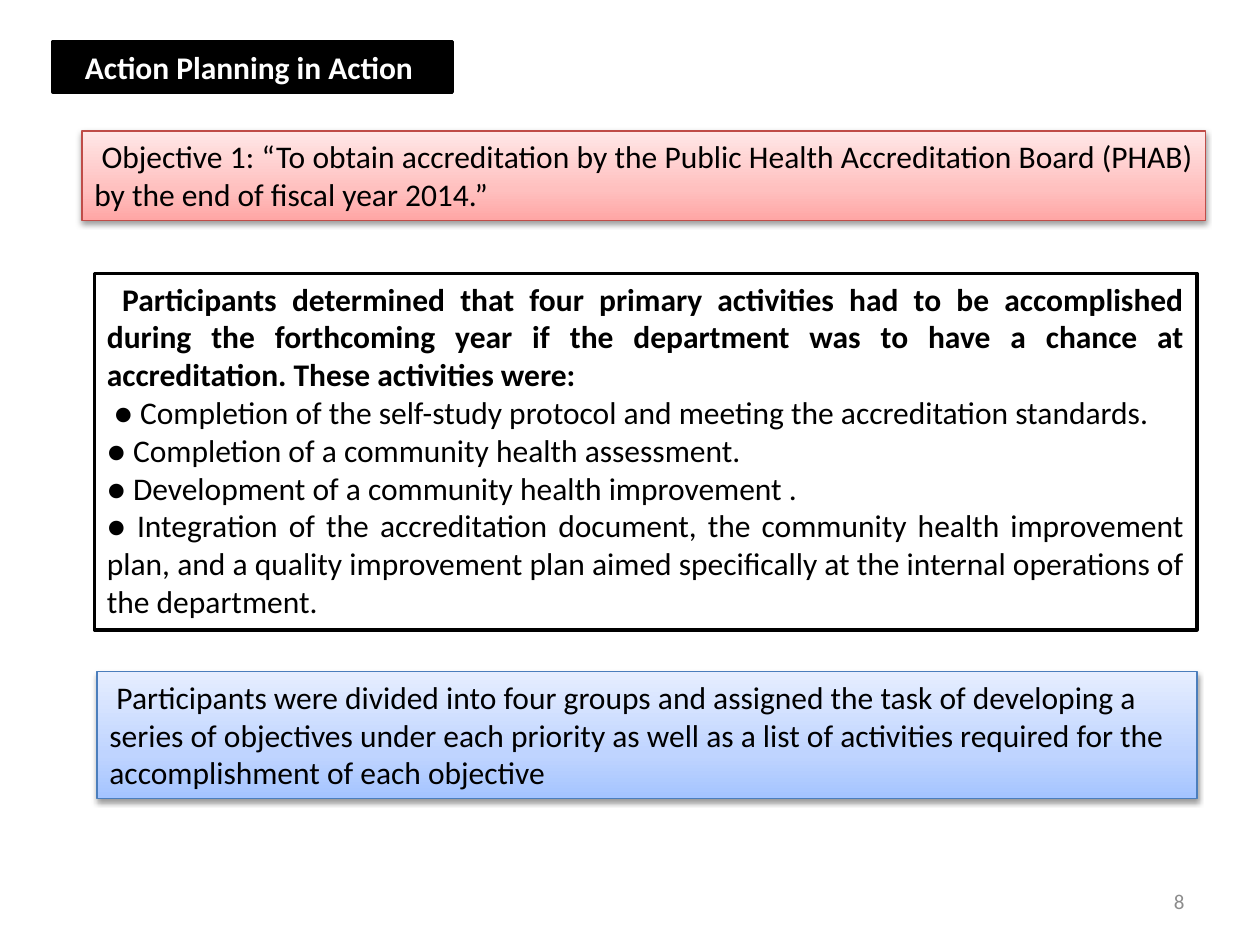
"""Builds the "Action Planning in Action" slide."""
from typing import NamedTuple, Optional

import lxml.etree
import pptx
import pptx.dml.color
import pptx.enum.shapes
import pptx.enum.text
import pptx.oxml
import pptx.oxml.ns
import pptx.util

EMU_PER_PX = 9144
ALIGN = pptx.enum.text.PP_ALIGN
ANCHOR = pptx.enum.text.MSO_ANCHOR


class Line(NamedTuple):
    text: str
    bold: bool = False


class Panel(NamedTuple):
    box: tuple[int, int, int, int]
    lines: list[Line]
    fill: str
    border: str
    border_pt: float = 2
    gradient: Optional[tuple[str, str, str]] = None
    color: str = "000000"
    align: ALIGN = ALIGN.JUSTIFY


PANELS = [
    Panel(
        (65, 104, 892, 71),
        [Line(" Objective 1: “To obtain accreditation by the Public Health "
              "Accreditation Board (PHAB) by the end of fiscal year 2014.”")],
        "FFC0BF", "BF4C48", 0.75, ("FFA6A5", "FFC0BF", "FFE7E7"),
    ),
    Panel(
        (75, 217, 875, 283),
        [
            Line(" Participants determined that four primary activities had to be "
                 "accomplished during the forthcoming year if the department was to "
                 "have a chance at accreditation. These activities were:", True),
            Line(" ● Completion of the self-study protocol and meeting the "
                 "accreditation standards."),
            Line("● Completion of a community health assessment."),
            Line("● Development of a community health improvement ."),
            Line("● Integration of the accreditation document, the community health "
                 "improvement plan, and a quality improvement plan aimed specifically "
                 "at the internal operations of the department."),
        ],
        "FFFFFF", "000000",
    ),
    Panel(
        (42, 33, 317, 40), [Line("Action Planning in Action ", True)],
        "000000", "000000", color="FFFFFF", align=ALIGN.CENTER,
    ),
    Panel(
        (77, 533, 873, 101),
        [Line(" Participants were divided into four groups and assigned the task of "
              "developing a series of objectives under each priority as well as a list "
              "of activities required for the accomplishment of each objective")],
        "BFD4FF", "4B7EBC", 0.75, ("A4C4FF", "BFD4FF", "E6EEFF"), align=ALIGN.LEFT,
    ),
]


def px(length: int) -> pptx.util.Emu:
    return pptx.util.Emu(length * EMU_PER_PX)


def rgb(value: str) -> pptx.dml.color.RGBColor:
    return pptx.dml.color.RGBColor.from_string(value)


def write(frame, lines: list[Line], *, color: str, align: ALIGN,
          size: int = 18, anchor: ANCHOR = ANCHOR.TOP) -> None:
    frame.word_wrap = True
    frame.vertical_anchor = anchor
    for index, line in enumerate(lines):
        paragraph = frame.add_paragraph() if index else frame.paragraphs[0]
        paragraph.alignment = align
        run = paragraph.add_run()
        run.text = line.text
        run.font.name = "Calibri"
        run.font.size = pptx.util.Pt(size)
        run.font.bold = line.bold
        run.font.color.rgb = rgb(color)


def shade(shape, colors: tuple[str, str, str]) -> None:
    shape.fill.gradient()
    shape.fill.gradient_angle = 90
    stops = shape._element.spPr.find(".//" + pptx.oxml.ns.qn("a:gsLst"))
    for stop in list(stops):
        stops.remove(stop)
    for position, color in zip((0, 35, 100), colors):
        stop = lxml.etree.SubElement(
            stops, pptx.oxml.ns.qn("a:gs"), pos=str(position * 1000))
        lxml.etree.SubElement(stop, pptx.oxml.ns.qn("a:srgbClr"), val=color)


def cast_shadow(shape) -> None:
    effects = shape._element.spPr.find(pptx.oxml.ns.qn("a:effectLst"))
    effects.append(pptx.oxml.parse_xml(
        f'<a:outerShdw {pptx.oxml.ns.nsdecls("a")} blurRad="40000" dist="20000" '
        'dir="5400000" rotWithShape="0"><a:srgbClr val="000000">'
        '<a:alpha val="38000"/></a:srgbClr></a:outerShdw>'))


def draw_panel(slide, panel: Panel) -> None:
    shape = slide.shapes.add_shape(
        pptx.enum.shapes.MSO_SHAPE.RECTANGLE, *map(px, panel.box))
    shape.line.color.rgb = rgb(panel.border)
    shape.line.width = pptx.util.Pt(panel.border_pt)
    shape.shadow.inherit = False
    if panel.gradient:
        shade(shape, panel.gradient)
        cast_shadow(shape)
    else:
        shape.fill.solid()
        shape.fill.fore_color.rgb = rgb(panel.fill)
    write(shape.text_frame, panel.lines, color=panel.color, align=panel.align)
    shape.text_frame.auto_size = pptx.enum.text.MSO_AUTO_SIZE.SHAPE_TO_FIT_TEXT


def main() -> None:
    deck = pptx.Presentation()
    deck.slide_width, deck.slide_height = px(1000), px(750)
    slide = deck.slides.add_slide(deck.slide_layouts[6])
    page_number = slide.shapes.add_textbox(*map(px, (717, 695, 233, 40)))
    write(page_number.text_frame, [Line("8")], color="8C8C8C",
          align=ALIGN.RIGHT, size=12, anchor=ANCHOR.MIDDLE)
    for panel in PANELS:
        draw_panel(slide, panel)
    deck.save("out.pptx")


if __name__ == "__main__":
    main()
